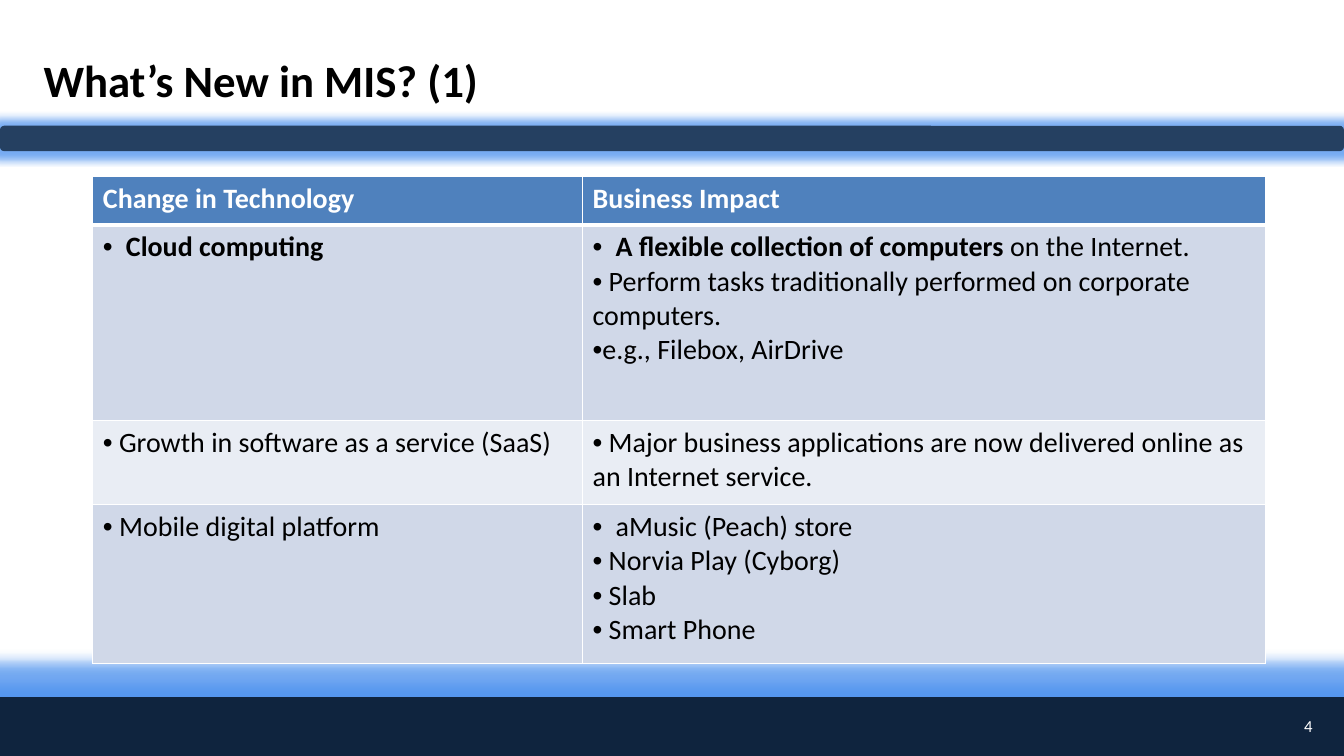
from typing import NamedTuple

from lxml.etree import SubElement
from pptx import Presentation
from pptx.dml.color import RGBColor
from pptx.enum.shapes import MSO_SHAPE as Shape
from pptx.enum.text import MSO_ANCHOR as Anchor, PP_ALIGN as Align
from pptx.oxml.ns import qn
from pptx.util import Cm, Pt

FONT = "Calibri"
BANDS = ("D0D8E8", "E9EDF4")
COLUMN_WIDTHS = (12.34, 17.22)
ROW_HEIGHTS = (1.22, 4.92, 2.13, 3.99)


class Item(NamedTuple):
    text: str
    bold: str = ""
    hang: float = 0


HEADINGS = ("Change in Technology", "Business Impact")
CHANGES = (
    ([Item("", "Cloud computing", 0.58)],
     [Item(" on the Internet.", "A flexible collection of computers", 0.58),
      Item(" Perform tasks traditionally performed on corporate computers."),
      Item("e.g., Filebox, AirDrive")]),
    ([Item(" Growth in software as a service (SaaS)")],
     [Item(" Major business applications are now delivered online as "
           "an Internet service.")]),
    ([Item(" Mobile digital platform")],
     [Item("aMusic (Peach) store", hang=0.58),
      Item(" Norvia Play (Cyborg)"),
      Item(" Slab"),
      Item(" Smart Phone")]),
)


def color(hex_code):
    return RGBColor.from_string(hex_code)


def set_font(font, size, hex_code, bold=False):
    font.name, font.size, font.bold = FONT, Pt(size), bold
    font.color.rgb = color(hex_code)


def add_band(slide, box, kind, fill, glow_radius):
    """A full-width bar with a soft blue glow."""
    band = slide.shapes.add_shape(kind, *map(Cm, box))
    band.shadow.inherit = False
    band.fill.solid()
    band.fill.fore_color.rgb = color(fill)
    band.line.fill.background()
    effects = band._element.spPr.find(qn("a:effectLst"))
    glow = SubElement(effects, qn("a:glow"), rad=str(Pt(glow_radius)))
    tint = SubElement(glow, qn("a:srgbClr"), val="4A90EE")
    SubElement(tint, qn("a:alpha"), val="75000")


def add_label(slide, box, text, size, hex_code, bold=False, align=Align.LEFT):
    frame = slide.shapes.add_textbox(*map(Cm, box)).text_frame
    frame.word_wrap = True
    frame.vertical_anchor = Anchor.MIDDLE
    line = frame.paragraphs[0]
    line.text = text
    line.alignment = align
    set_font(line.font, size, hex_code, bold)


def style_cell(cell, fill, bottom_width=1):
    """White borders, then the fill."""
    properties = cell._tc.get_or_add_tcPr()
    for side in "LRTB":
        width = bottom_width if side == "B" else 1
        border = SubElement(properties, qn(f"a:ln{side}"), w=str(Pt(width)))
        paint = SubElement(border, qn("a:solidFill"))
        SubElement(paint, qn("a:srgbClr"), val="FFFFFF")
    cell.fill.solid()
    cell.fill.fore_color.rgb = color(fill)


def add_item(paragraph, item):
    """A bulleted line with an optional bold opening."""
    set_font(paragraph.font, 20, "000000")
    properties = paragraph._p.get_or_add_pPr()
    properties.set("marL", str(Cm(item.hang)))
    properties.set("indent", str(-Cm(item.hang)))
    bullet_font = SubElement(properties, qn("a:buFont"), typeface="Arial")
    bullet_font.addnext(properties.makeelement(qn("a:buChar"), {"char": "•"}))
    # Default run properties come last in the paragraph properties
    properties.append(properties.find(qn("a:defRPr")))
    for text, bold in ((item.bold, True), (item.text, False)):
        if text:
            run = paragraph.add_run()
            run.text = text
            set_font(run.font, 20, "000000", bold)


def add_changes_table(slide, left, top):
    size = (sum(COLUMN_WIDTHS), sum(ROW_HEIGHTS))
    table = slide.shapes.add_table(
        len(ROW_HEIGHTS), len(COLUMN_WIDTHS),
        *map(Cm, (left, top, *size))).table
    for column, width in zip(table.columns, COLUMN_WIDTHS):
        column.width = Cm(width)
    for row, height in zip(table.rows, ROW_HEIGHTS):
        row.height = Cm(height)

    # Header row
    for cell, heading in zip(table.rows[0].cells, HEADINGS):
        style_cell(cell, "4F81BD", bottom_width=3)
        cell.text = heading
        set_font(cell.text_frame.paragraphs[0].font, 20, "FFFFFF", True)

    # Banded body rows
    for index, change in enumerate(CHANGES):
        for cell, items in zip(table.rows[index + 1].cells, change):
            style_cell(cell, BANDS[index % 2])
            frame = cell.text_frame
            for number, item in enumerate(items):
                add_item(frame.add_paragraph() if number
                         else frame.paragraphs[0], item)


def add_header(slide, width):
    add_band(slide, (0, 3.17, width, 0.64), Shape.ROUNDED_RECTANGLE,
             "254061", 11)
    add_label(slide, (0.85, 1.06, 29.36, 1.9), "What’s New in MIS? (1)",
              32, "000000", bold=True)


def add_footer(slide, width, top, height):
    add_band(slide, (0, top, width, height), Shape.RECTANGLE, "0F243E", 18)
    add_label(slide, (width - 1.96, top + 0.2, 1.42, 1.06), "4",
              12, "FFFFFF", align=Align.RIGHT)


def main():
    width, height = 33.87, 19.05
    deck = Presentation()
    deck.slide_width, deck.slide_height = Cm(width), Cm(height)
    slide = deck.slides.add_slide(deck.slide_layouts[6])
    add_footer(slide, width, 17.57, height - 17.57)
    add_header(slide, width)
    add_changes_table(slide, 2.34, 4.45)
    deck.save("out.pptx")


if __name__ == "__main__":
    main()
